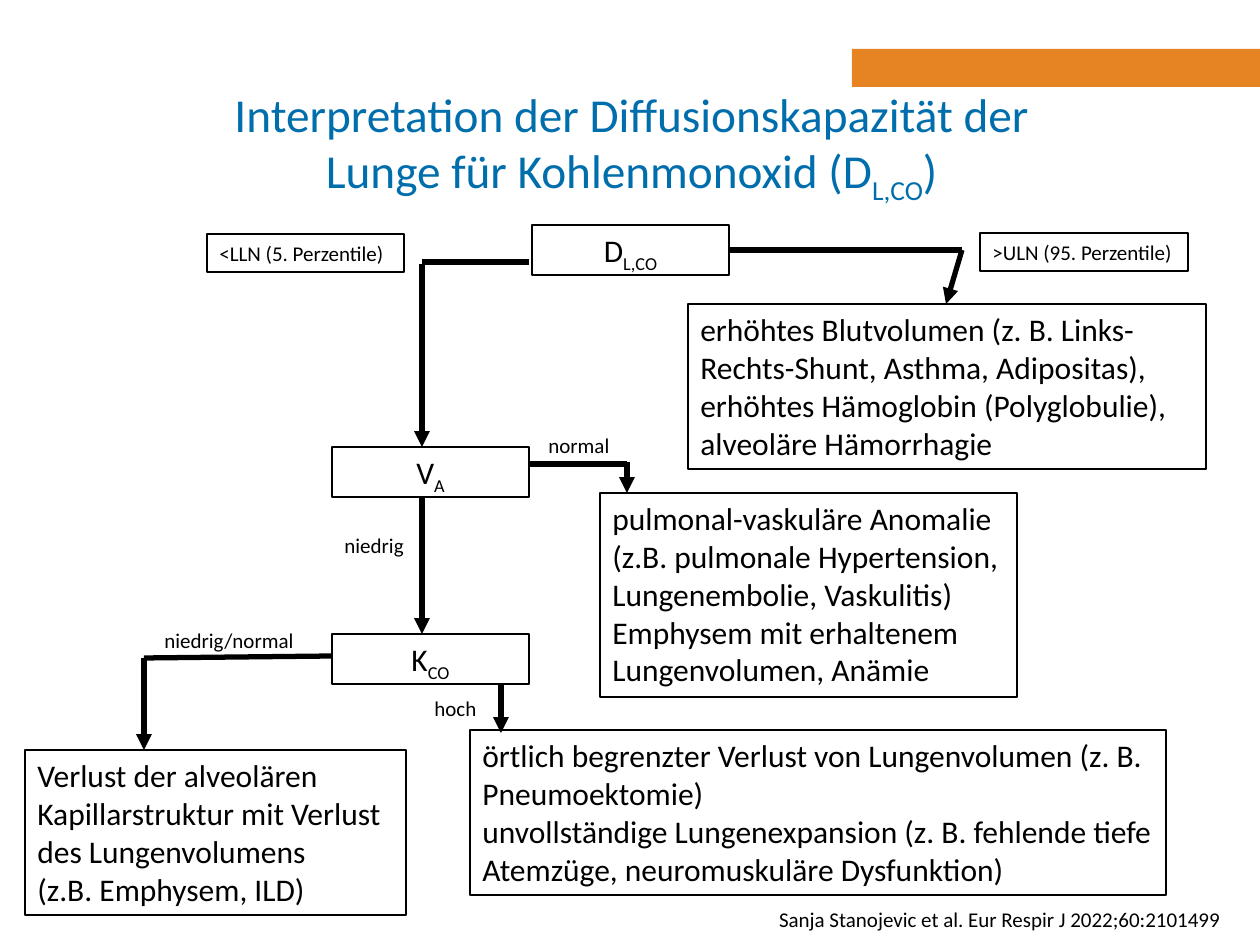
from dataclasses import dataclass

from pptx import Presentation
from pptx.dml.color import RGBColor
from pptx.enum.shapes import MSO_CONNECTOR, MSO_SHAPE
from pptx.enum.text import MSO_ANCHOR, MSO_AUTO_SIZE, PP_ALIGN
from pptx.oxml.ns import qn
from pptx.oxml.xmlchemy import OxmlElement
from pptx.slide import Slide
from pptx.text.text import TextFrame
from pptx.util import Emu, Pt

PIXELS_PER_INCH = 126
COLORS = {"bar": "E68323", "title": "006EAC", "ink": "000000"}
FONT_NAME = "Calibri"


@dataclass(frozen=True)
class Box:
    left: int
    top: int
    width: int
    height: int
    paragraphs: tuple[str, ...]
    size: int = 18
    align: PP_ALIGN = PP_ALIGN.LEFT
    outlined: bool = True


@dataclass(frozen=True)
class Line:
    start: tuple[int, int]
    end: tuple[int, int]
    arrow: bool = False


CENTER = PP_ALIGN.CENTER
TITLE = "Interpretation der Diffusionskapazität der Lunge für Kohlenmonoxid (D_L,CO_)"

BOXES = (
    Box(332, 447, 197, 50, ("V_A",), align=CENTER),
    Box(532, 225, 197, 50, ("D_L,CO",), align=CENTER),
    Box(600, 493, 417, 204, (
        "pulmonal-vaskuläre Anomalie\n(z.B. pulmonale Hypertension, Lungenembolie, Vaskulitis)",
        "Emphysem mit erhaltenem Lungenvolumen, Anämie",
    )),
    Box(332, 634, 197, 50, ("K_CO",), align=CENTER),
    Box(688, 304, 518, 165, (
        "erhöhtes Blutvolumen (z. B. Links-Rechts-Shunt, Asthma, Adipositas), "
        "erhöhtes Hämoglobin (Polyglobulie), alveoläre Hämorrhagie",
    )),
    Box(470, 730, 696, 165, (
        "örtlich begrenzter Verlust von Lungenvolumen (z. B. Pneumoektomie)",
        "unvollständige Lungenexpansion (z. B. fehlende tiefe Atemzüge, "
        "neuromuskuläre Dysfunktion)",
    )),
    Box(25, 750, 381, 165, (
        "Verlust der alveolären Kapillarstruktur mit Verlust des Lungenvolumens",
        "(z.B. Emphysem, ILD)",
    )),
    Box(207, 234, 197, 38, ("<LLN (5. Perzentile)",), 12),
    Box(980, 233, 208, 38, (">ULN (95. Perzentile)",), 12),
)

LABELS = (
    Box(152, 621, 169, 38, ("niedrig/normal",), 12, outlined=False),
    Box(422, 689, 77, 38, ("hoch",), 12, outlined=False),
    Box(332, 526, 110, 38, ("niedrig",), 12, outlined=False),
    Box(536, 426, 91, 38, ("normal",), 12, outlined=False),
)

CITATION = Box(779, 907, 460, 38, ("Sanja Stanojevic et al. Eur Respir J 2022;60:2101499",),
               12, outlined=False)

LINES = (
    Line((962, 250), (946, 304), True),
    Line((729, 250), (962, 250)),
    Line((144, 658), (332, 656)),
    Line((501, 685), (501, 733), True),
    Line((144, 658), (144, 750), True),
    Line((422, 497), (422, 634), True),
    Line((627, 462), (627, 493), True),
    Line((529, 464), (627, 464)),
    Line((422, 264), (422, 447), True),
    Line((422, 262), (529, 262)),
)


def px(value: int) -> Emu:
    return Emu(round(value * 914400 / PIXELS_PER_INCH))


def color(name: str) -> RGBColor:
    return RGBColor.from_string(COLORS[name])


def write_text(frame: TextFrame, paragraphs: tuple[str, ...], size: int,
               align: PP_ALIGN, color_name: str = "ink") -> None:
    frame.word_wrap = True
    for index, text in enumerate(paragraphs):
        paragraph = frame.add_paragraph() if index else frame.paragraphs[0]
        paragraph.alignment = align
        for line_index, line in enumerate(text.split("\n")):
            if line_index:
                paragraph.add_line_break()
            for part_index, part in enumerate(line.split("_")):
                run = paragraph.add_run()
                run.text = part
                run.font.name = FONT_NAME
                run.font.size = Pt(size)
                run.font.color.rgb = color(color_name)
                if part_index % 2:
                    run._r.get_or_add_rPr().set("baseline", "-25000")


def draw_box(slide: Slide, box: Box) -> TextFrame:
    place = px(box.left), px(box.top), px(box.width), px(box.height)
    if box.outlined:
        shape = slide.shapes.add_shape(MSO_SHAPE.RECTANGLE, *place)
        shape.shadow.inherit = False
        shape.fill.background()
        shape.line.color.rgb = color("ink")
        shape.line.width = Pt(0.75)
    else:
        shape = slide.shapes.add_textbox(*place)
    frame = shape.text_frame
    frame.vertical_anchor = MSO_ANCHOR.TOP
    write_text(frame, box.paragraphs, box.size, box.align)
    frame.auto_size = MSO_AUTO_SIZE.SHAPE_TO_FIT_TEXT
    return frame


def draw_line(slide: Slide, line: Line) -> None:
    connector = slide.shapes.add_connector(
        MSO_CONNECTOR.STRAIGHT, *map(px, line.start + line.end))
    connector.line.color.rgb = color("ink")
    connector.line.width = Pt(3)
    if line.arrow:
        arrowhead = OxmlElement("a:tailEnd")
        arrowhead.set("type", "triangle")
        connector.line._get_or_add_ln().append(arrowhead)
    properties = connector._element.find(qn("p:spPr"))
    properties.append(OxmlElement("a:effectLst"))


def draw_title(slide: Slide) -> None:
    title = slide.shapes.title
    title.left, title.top, title.width, title.height = map(px, (186, 87, 891, 117))
    frame = title.text_frame
    frame.auto_size = MSO_AUTO_SIZE.NONE
    frame.vertical_anchor = MSO_ANCHOR.MIDDLE
    write_text(frame, (TITLE,), 27, CENTER, "title")


def draw_bar(slide: Slide) -> None:
    bar = slide.shapes.add_shape(MSO_SHAPE.RECTANGLE, *map(px, (852, 49, 408, 38)))
    bar.shadow.inherit = False
    bar.fill.solid()
    bar.fill.fore_color.rgb = color("bar")
    bar.line.fill.background()


def main() -> None:
    presentation = Presentation()
    presentation.slide_width, presentation.slide_height = px(1260), px(945)
    slide = presentation.slides.add_slide(presentation.slide_layouts[5])
    draw_bar(slide)
    draw_title(slide)
    citation = draw_box(slide, CITATION)
    citation.margin_left = citation.margin_right = 0
    citation.margin_top = citation.margin_bottom = 0
    for box in BOXES:
        draw_box(slide, box)
    for line in LINES:
        draw_line(slide, line)
    for label in LABELS:
        draw_box(slide, label)
    presentation.save("out.pptx")


if __name__ == "__main__":
    main()
